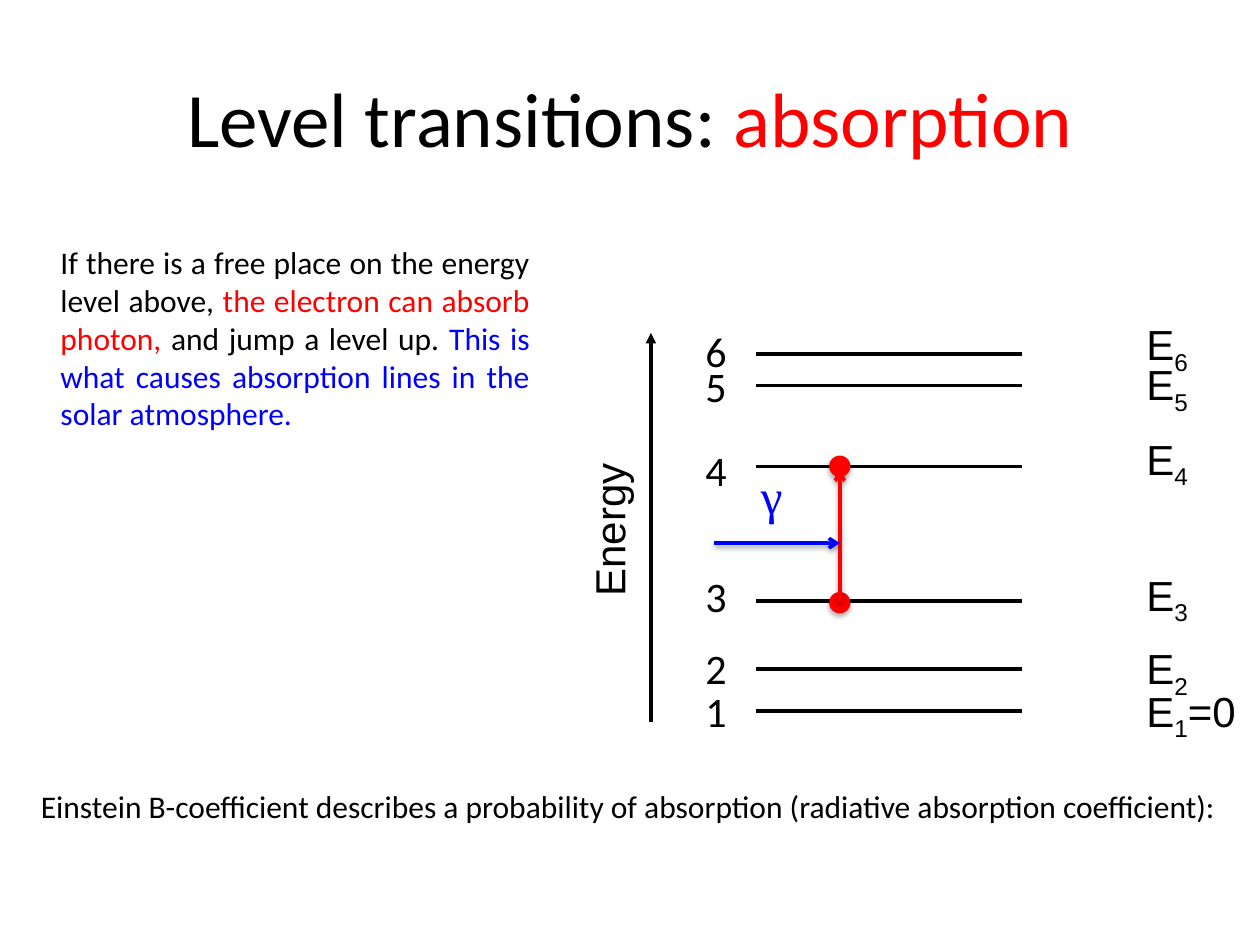
from lxml import etree
from pptx import Presentation
from pptx.dml.color import RGBColor
from pptx.enum import shapes, text
from pptx.oxml import ns
from pptx.util import Cm, Pt

COLORS = {"black": "000000", "red": "FF0000", "blue": "0000FF"}

# Lengths are in centimetres; each run is (text, colour).
TITLE = [("Level transitions: ", "black"), ("absorption", "red")]
EXPLANATION = [
    ("If there is a free place on the energy level above, ", "black"),
    ("the electron can absorb photon, ", "red"),
    ("and jump a level up. ", "black"),
    ("This is what causes absorption lines in the solar atmosphere.", "blue"),
]
EINSTEIN = [("Einstein B-coefficient describes a probability of absorption "
             "(radiative absorption coefficient):", "black")]

# number, line height, top of number, top of energy label, label suffix
LEVELS = [
    ("6", 7.14, 6.43, 6.3, ""),
    ("5", 7.77, 7.14, 7.11, ""),
    ("4", 9.4, 8.84, 8.61, ""),
    ("3", 12.12, 11.38, 11.35, ""),
    ("2", 13.49, 12.83, 12.83, ""),
    ("1", 14.33, 13.69, 13.69, "=0"),
]
LEVEL_LEFT, LEVEL_RIGHT = 15.24, 20.6
NUMBER_LEFT, ENERGY_LEFT = 13.97, 22.86
LABEL_HEIGHT = 1.3
ELECTRON_X, ELECTRON_SIZE = 16.93, 0.43
ELECTRON_YS = (9.4, 12.15)
PHOTON_LEFT, PHOTON_Y = 14.4, 10.95


def color(name):
    return RGBColor.from_string(COLORS[name])


def set_shadow(shape, opacity=0, distance=0):
    """Drop a soft shadow straight down, or none when opacity is 0."""
    properties = shape._element.spPr
    effects = etree.SubElement(properties, ns.qn("a:effectLst"))
    if opacity:
        shadow = etree.SubElement(
            effects, ns.qn("a:outerShdw"), blurRad=str(Pt(3.1)),
            dist=str(Pt(distance)), dir="5400000", rotWithShape="0")
        tint = etree.SubElement(shadow, ns.qn("a:srgbClr"), val=COLORS["black"])
        etree.SubElement(tint, ns.qn("a:alpha"), val=str(opacity * 1000))


def add_text(slide, box, runs, size, font="Calibri", align=text.PP_ALIGN.LEFT,
             anchor=text.MSO_ANCHOR.TOP, wrap=True):
    shape = slide.shapes.add_textbox(*map(Cm, box))
    frame = shape.text_frame
    frame.word_wrap = wrap
    frame.vertical_anchor = anchor
    paragraph = frame.paragraphs[0]
    paragraph.alignment = align
    for words, color_name in runs:
        run = paragraph.add_run()
        run.text = words
        run.font.size = Pt(size)
        run.font.name = font
        run.font.color.rgb = color(color_name)
    return shape


def add_line(slide, start, end, color_name="black", head=None, shadow=False):
    line = slide.shapes.add_connector(
        shapes.MSO_CONNECTOR.STRAIGHT, *map(Cm, start + end))
    line.line.color.rgb = color(color_name)
    line.line.width = Pt(2)
    if head:
        etree.SubElement(line.line._get_or_add_ln(), ns.qn("a:tailEnd"), type=head)
    set_shadow(line, 38 if shadow else 0, 1.6)


def add_levels(slide):
    for number, line_y, number_top, energy_top, suffix in LEVELS:
        add_line(slide, (LEVEL_LEFT, line_y), (LEVEL_RIGHT, line_y))
        add_text(slide, (NUMBER_LEFT, number_top, 0.99, LABEL_HEIGHT),
                 [(number, "black")], 24, wrap=False)
        runs = [(part, "black") for part in ("E", number, suffix) if part]
        width = 2.39 if suffix else 1.4
        label = add_text(slide, (ENERGY_LEFT, energy_top, width, LABEL_HEIGHT),
                         runs, 24, "Arial", wrap=False)
        subscript = label.text_frame.paragraphs[0].runs[1]
        subscript.font._element.set("baseline", "-25000")


def add_energy_axis(slide):
    add_line(slide, (13.12, 14.55), (13.12, 6.71), head="triangle")
    label = add_text(slide, (10.67, 10.01, 3.23, LABEL_HEIGHT),
                     [("Energy", "black")], 24, "Arial", wrap=False)
    label.rotation = 270


def add_electron(slide, center_y):
    radius = ELECTRON_SIZE / 2
    electron = slide.shapes.add_shape(
        shapes.MSO_SHAPE.OVAL, Cm(ELECTRON_X - radius), Cm(center_y - radius),
        Cm(ELECTRON_SIZE), Cm(ELECTRON_SIZE))
    electron.fill.solid()
    electron.fill.fore_color.rgb = color("red")
    electron.line.fill.background()
    set_shadow(electron, 35, 1.8)


def add_absorption(slide):
    for center_y in ELECTRON_YS:
        add_electron(slide, center_y)
    add_line(slide, (ELECTRON_X, 12.12), (ELECTRON_X, 9.47), "red", "arrow", True)
    add_line(slide, (PHOTON_LEFT, PHOTON_Y), (ELECTRON_X, PHOTON_Y),
             "blue", "arrow", True)
    add_text(slide, (15.09, 9.25, 0.79, 1.45), [("γ", "blue")], 28,
             "Times New Roman")


def main():
    presentation = Presentation()
    presentation.slide_width, presentation.slide_height = Cm(25.4), Cm(19.05)
    slide = presentation.slides.add_slide(presentation.slide_layouts[6])
    add_text(slide, (1.27, 0.76, 22.86, 3.18), TITLE, 44,
             align=text.PP_ALIGN.CENTER, anchor=text.MSO_ANCHOR.MIDDLE)
    add_levels(slide)
    add_energy_axis(slide)
    add_absorption(slide)
    add_text(slide, (0.97, 4.78, 9.96, 4.11), EXPLANATION, 18,
             align=text.PP_ALIGN.JUSTIFY)
    add_text(slide, (0.41, 15.75, 24.51, 1.02), EINSTEIN, 18,
             align=text.PP_ALIGN.CENTER)
    presentation.save("out.pptx")


if __name__ == "__main__":
    main()
